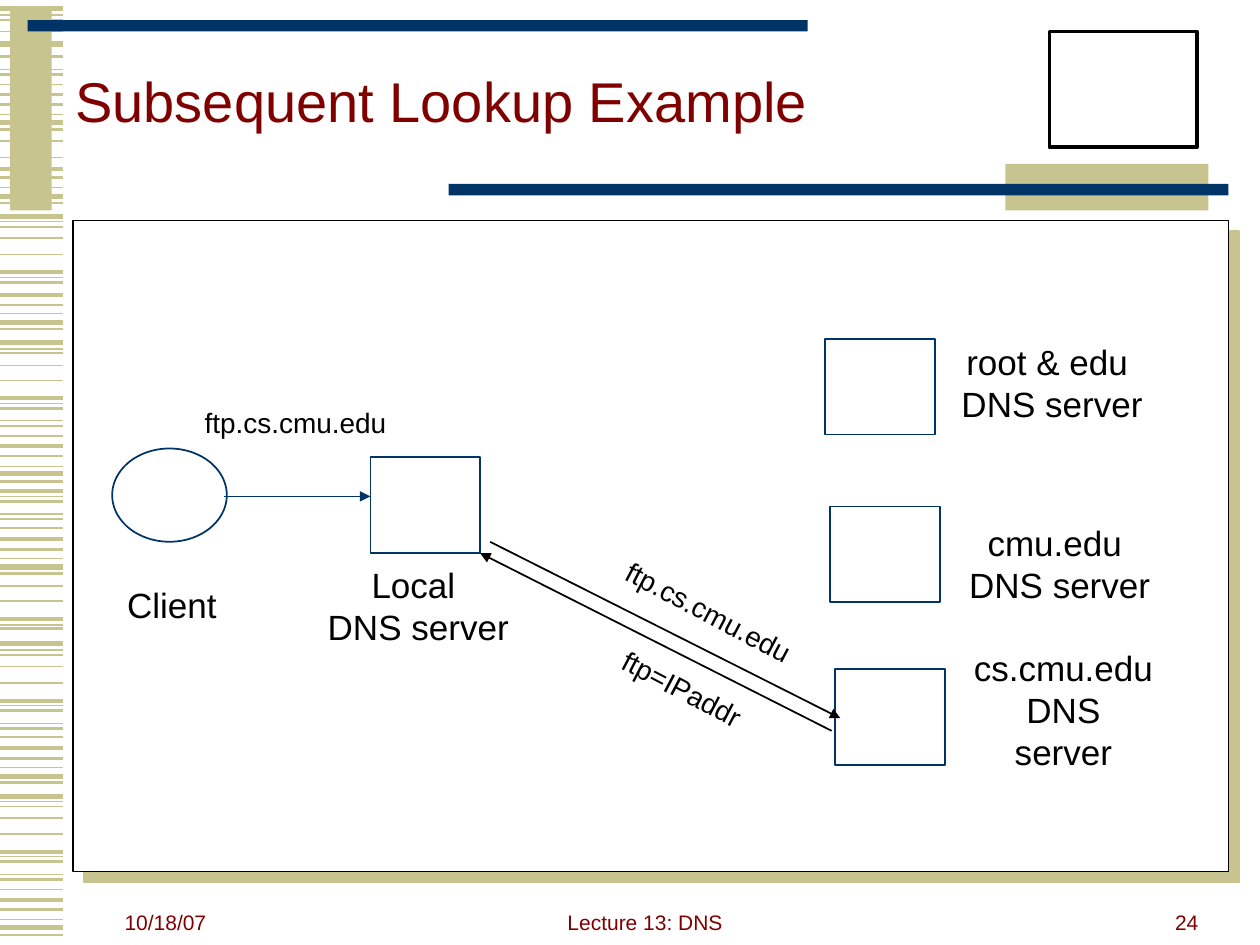
from lxml.etree import SubElement
from pptx import Presentation
from pptx.dml.color import RGBColor
from pptx.enum.shapes import MSO_CONNECTOR, MSO_SHAPE
from pptx.enum.text import MSO_ANCHOR, PP_ALIGN
from pptx.oxml.ns import qn
from pptx.util import Inches, Pt

KHAKI = RGBColor(0xC7, 0xC4, 0x8F)
NAVY = RGBColor(0x00, 0x33, 0x66)
MAROON = RGBColor(0x80, 0x00, 0x00)
BLACK = RGBColor(0x00, 0x00, 0x00)
WHITE = RGBColor(0xFF, 0xFF, 0xFF)
FONT = "Arial"

# Left margin stripes: line width in points -> heights on the slide
STRIPES = {
    0.75: (0.12, 0.55, 0.91, 1.49, 1.76, 2.2, 2.49, 2.77, 3.2, 3.34, 3.7, 3.94,
           4.08, 4.43, 4.96, 5.16, 5.6, 5.74, 6.09, 6.36, 6.8, 6.94, 7.3),
    1: (0.16, 0.25, 0.67, 1.12, 1.25, 1.8, 1.89, 2.02, 2.8, 2.9, 3.02, 3.46,
        4.19, 4.65, 4.77, 5.2, 5.29, 5.42, 5.85, 6.4, 6.49, 6.62, 7.06),
    1.5: (0.45, 0.59, 0.83, 1.03, 1.41, 1.61, 2.24, 2.42, 2.61, 3.24, 3.38,
          3.62, 3.82, 3.98, 4.12, 4.36, 4.55, 4.99, 5.64, 5.78, 6.02, 6.21,
          6.84, 6.98, 7.22, 7.42),
    2.25: (0.75, 1.34, 2.16, 2.34, 3.16, 3.54, 3.9, 4.28, 4.91, 5.56, 5.94,
           6.76, 7.14),
    3: (0.07, 0.35, 0.97, 1.56, 1.72, 2.56, 2.72, 3.76, 4.5, 5.11, 6.16, 6.32,
        7.36),
}
STRIPE_LENGTH = 0.5

# Header bars: left, top, width, height, colour
BARS = [
    (0.08, 0.08, 0.33, 1.59, KHAKI),
    (0.22, 0.16, 6.19, 0.09, NAVY),
    (7.98, 1.3, 1.61, 0.37, KHAKI),
    (3.56, 1.46, 6.19, 0.09, NAVY),
]
EMBLEM = (8.33, 0.25, 1.17, 0.92)
PANEL = (0.58, 1.75, 9.17, 5.17)

TITLE = ("Subsequent Lookup Example", (0.5, 0.17, 9.25, 1.33))
FOOTERS = [
    ("10/18/07", (0.89, 6.97, 2.08, 0.5), PP_ALIGN.LEFT),
    ("Lecture 13: DNS", (3.43, 6.97, 3.38, 0.5), PP_ALIGN.CENTER),
    ("24", (7.21, 6.97, 2.4, 0.5), PP_ALIGN.RIGHT),
]

# Hosts: label, label frame, left and top of the server box
CLIENT = ("Client", (0.91, 4.58, 0.91, 0.43), (0.89, 3.56, 0.91, 0.74))
SERVER_SIZE = (0.87, 0.76)
SERVERS = [
    ("Local \nDNS server", (2.5, 4.42, 1.64, 0.77), (2.94, 3.63)),
    ("root & edu \nDNS server", (7.53, 2.65, 1.64, 0.77), (6.55, 2.69)),
    ("cmu.edu \nDNS server", (7.59, 4.09, 1.64, 0.77), (6.59, 4.02)),
    ("cs.cmu.edu\nDNS\nserver", (7.63, 5.08, 1.62, 1.1), (6.63, 5.31)),
]

# Messages: text, text frame, rotation, arrow start, arrow end, arrow colour
MESSAGES = [
    ("ftp.cs.cmu.edu", (1.52, 3.17, 1.65, 0.37), 0, (1.78, 3.94), (2.94, 3.94), NAVY),
    ("ftp.cs.cmu.edu", (4.8, 4.67, 1.65, 0.37), 27.8, (3.89, 4.3), (6.67, 5.7), BLACK),
    ("ftp=IPaddr", (4.8, 5.28, 1.23, 0.37), 27.8, (6.6, 5.8), (3.81, 4.39), BLACK),
]


def add_box(slide, kind, frame, fill=None, outline=None, weight=1):
    box = slide.shapes.add_shape(kind, *map(Inches, frame))
    box.shadow.inherit = False
    if fill is None:
        box.fill.background()
    else:
        box.fill.solid()
        box.fill.fore_color.rgb = fill
    if outline is None:
        box.line.fill.background()
    else:
        box.line.color.rgb = outline
        box.line.width = Pt(weight)
    return box


def add_line(slide, start, end, color, weight=1, arrow=False):
    line = slide.shapes.add_connector(
        MSO_CONNECTOR.STRAIGHT, *map(Inches, (*start, *end)))
    line.line.color.rgb = color
    line.line.width = Pt(weight)
    if arrow:
        SubElement(line.line._get_or_add_ln(), qn("a:tailEnd"), type="triangle")
    SubElement(line._element.spPr, qn("a:effectLst"))


def add_text(slide, text, frame, size, color=BLACK, align=PP_ALIGN.CENTER,
             anchor=MSO_ANCHOR.MIDDLE, wrap=False):
    box = slide.shapes.add_textbox(*map(Inches, frame))
    box.text_frame.text = text
    box.text_frame.word_wrap = wrap
    box.text_frame.vertical_anchor = anchor
    for paragraph in box.text_frame.paragraphs:
        paragraph.alignment = align
        for run in paragraph.runs:
            run.font.name = FONT
            run.font.size = Pt(size)
            run.font.color.rgb = color
    return box


def add_drop_shadow(box, color, distance):
    effects = box._element.spPr.find(qn("a:effectLst"))
    shadow = SubElement(effects, qn("a:outerShdw"), dist=str(Pt(distance)),
                        dir=str(45 * 60000), algn="ctr", rotWithShape="0")
    SubElement(shadow, qn("a:srgbClr"), val=str(color))


def main():
    prs = Presentation()
    prs.slide_width, prs.slide_height = Inches(10), Inches(7.5)
    slide = prs.slides.add_slide(prs.slide_layouts[6])

    # Background decoration
    for weight, heights in STRIPES.items():
        for y in heights:
            add_line(slide, (0, y), (STRIPE_LENGTH, y), KHAKI, weight)
    for *frame, color in BARS:
        add_box(slide, MSO_SHAPE.RECTANGLE, frame, fill=color)
    add_box(slide, MSO_SHAPE.RECTANGLE, EMBLEM, WHITE, BLACK, 2.25)

    # Title and footers
    title = add_text(slide, *TITLE, 32, MAROON, PP_ALIGN.LEFT, wrap=True)
    title.text_frame.paragraphs[0].line_spacing = 0.85
    for text, frame, align in FOOTERS:
        add_text(slide, text, frame, 12, MAROON, align, MSO_ANCHOR.BOTTOM, True)

    # Content panel
    panel = add_box(slide, MSO_SHAPE.RECTANGLE, PANEL, WHITE, BLACK, 0.75)
    add_drop_shadow(panel, KHAKI, 8.5)

    # Client and servers
    label, label_frame, client_frame = CLIENT
    add_box(slide, MSO_SHAPE.OVAL, client_frame, outline=NAVY)
    add_text(slide, label, label_frame, 20)
    for label, label_frame, corner in SERVERS:
        add_box(slide, MSO_SHAPE.RECTANGLE, corner + SERVER_SIZE, outline=NAVY)
        add_text(slide, label, label_frame, 20)

    # Lookup messages
    for text, frame, angle, start, end, color in MESSAGES:
        add_line(slide, start, end, color, arrow=True)
        add_text(slide, text, frame, 16).rotation = angle

    prs.save("out.pptx")


if __name__ == "__main__":
    main()
